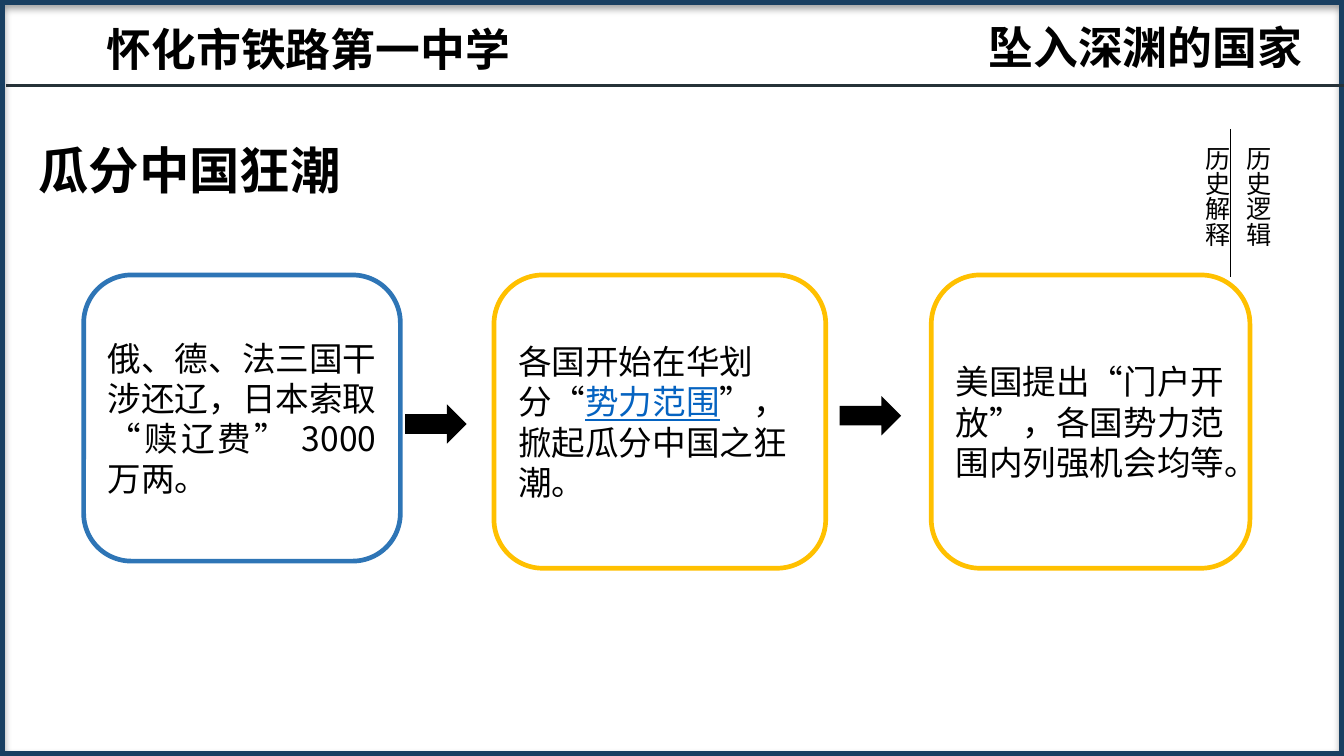
from lxml.etree import SubElement
from pptx import Presentation
from pptx.dml.color import RGBColor as RGB
from pptx.enum.shapes import MSO_CONNECTOR as LINK, MSO_SHAPE as SHAPE
from pptx.enum.text import MSO_ANCHOR as ANCHOR, MSO_AUTO_SIZE as FIT, PP_ALIGN as ALIGN
from pptx.oxml.ns import qn
from pptx.util import Cm, Pt

HUES = {"frame": "193F61", "rule": "263238", "blue": "2E75B6",
        "gold": "FFC000", "link": "0563C1", "ink": "000000"}
SANS, HEAD = "Noto Sans CJK JP", "Noto Sans CJK SC"
WIDE, HIGH = 33.87, 19.05


def hue(name):
    return RGB.from_string(HUES[name])


def cms(box):
    return [Cm(n) for n in box]


def write(shape, *runs, size=24, font=SANS, bold=False, align=ALIGN.LEFT,
          anchor=ANCHOR.TOP, space=None):
    """Fill a shape with one paragraph; a run is a text or a (text, hue) pair, underlined."""
    frame = shape.text_frame
    frame.word_wrap, frame.auto_size = True, FIT.NONE
    frame.vertical_anchor = anchor
    para = frame.paragraphs[0]
    para.alignment, para.line_spacing = align, space
    for item in runs:
        text, tint = (item, "ink") if isinstance(item, str) else item
        run = para.add_run()
        run.text = text
        face = run.font
        face.size, face.bold, face.name = Pt(size), bold, font
        face.underline = tint == "link"
        face.color.rgb = hue(tint)
        SubElement(run._r.get_or_add_rPr(), qn("a:ea"), typeface=font)


def label(shapes, box, text, **style):
    area = shapes.add_textbox(*cms(box))
    write(area, text, **style)
    return area


def form(shapes, kind, box, fill=None, line=None, width=0):
    item = shapes.add_shape(kind, *cms(box))
    if fill:
        item.fill.solid()
        item.fill.fore_color.rgb = hue(fill)
    else:
        item.fill.background()
    if line:
        item.line.color.rgb, item.line.width = hue(line), Pt(width)
    else:
        item.line.fill.background()
    item.shadow.inherit = False
    return item


def rule(shapes, ends, tint, width):
    line = shapes.add_connector(LINK.STRAIGHT, *cms(ends))
    line.line.color.rgb, line.line.width = hue(tint), Pt(width)
    SubElement(line._element.spPr, qn("a:effectLst"))


def border(shapes, box):
    edge = form(shapes, SHAPE.RECTANGLE, box, line="frame", width=7)
    glow = SubElement(edge._element.spPr.find(qn("a:effectLst")), qn("a:outerShdw"),
                      blurRad=str(Pt(5.2)), dist=str(Pt(3)), dir="5400000",
                      algn="t", rotWithShape="0")
    tint = SubElement(glow, qn("a:srgbClr"), val=HUES["ink"])
    SubElement(tint, qn("a:alpha"), val="40000")


def header(shapes, box):
    left, top, width, height = box
    rule(shapes, (left + 0.15, top + height, left + width, top + height), "rule", 2.25)
    label(shapes, (left + 2.44, top + 0.43, 10.85, 1.63), "怀化市铁路第一中学",
          size=32, bold=True)
    label(shapes, (left + 24.66, top + 0.36, 8.84, 1.63), "坠入深渊的国家",
          size=32, font=HEAD, bold=True)


def heading(title, box):
    title.left, title.top, title.width, title.height = cms(box)
    write(title, "瓜分中国狂潮", size=36, font="Calibri", bold=True, space=0.9)


def tags(shapes, box):
    """Two vertical labels either side of a thin line."""
    left, top, width, height = box
    group = shapes.add_group_shape().shapes
    mid = left + 1.09
    rule(group, (mid, top, mid, top + height), "ink", 0.5)
    for x, text in ((left, "历史解释"), (left + width - 1.27, "历史逻辑")):
        area = label(group, (x, top + 0.19, 1.27, 3.38), text, size=18, font="Arial")
        area.text_frame._txBody.bodyPr.set("vert", "eaVert")


def flow(shapes, box):
    """Three rounded steps joined by two block arrows."""
    left, top = box[:2]
    steps = (
        (0, 7.98, 7.21, "blue", ALIGN.JUSTIFY,
         ["俄、德、法三国干涉还辽，日本索取 “赎辽费” 3000万两。"]),
        (10.34, 8.36, 7.39, "gold", ALIGN.LEFT,
         ["各国开始在华划分“", ("势力范围", "link"), "”，掀起瓜分中国之狂潮。"]),
        (21.36, 8.03, 7.39, "gold", ALIGN.LEFT,
         ["美国提出“门户开放”，各国势力范围内列强机会均等。"]),
    )
    for x, width, height, tint, align, runs in steps:
        step = form(shapes, SHAPE.ROUNDED_RECTANGLE, (left + x, top, width, height),
                    line=tint, width=3.35)
        write(step, *runs, align=align, anchor=ANCHOR.MIDDLE)
    for x, y in ((8.1, 3.26), (19.05, 3.05)):
        form(shapes, SHAPE.RIGHT_ARROW, (left + x, top + y, 1.55, 0.99), fill="ink")


def main():
    deck = Presentation()
    deck.slide_width, deck.slide_height = Cm(WIDE), Cm(HIGH)
    slide = deck.slides.add_slide(deck.slide_layouts[5])
    shapes = slide.shapes
    border(shapes, (0, 0, WIDE, HIGH))
    header(shapes, (0, 0, WIDE, 2.16))
    heading(shapes.title, (0.71, 3.56, 29.21, 2.01))
    flow(shapes, (2.11, 6.93, 29.39, 7.39))
    tags(shapes, (29.92, 3.25, 2.29, 3.74))
    deck.save("out.pptx")


if __name__ == "__main__":
    main()
